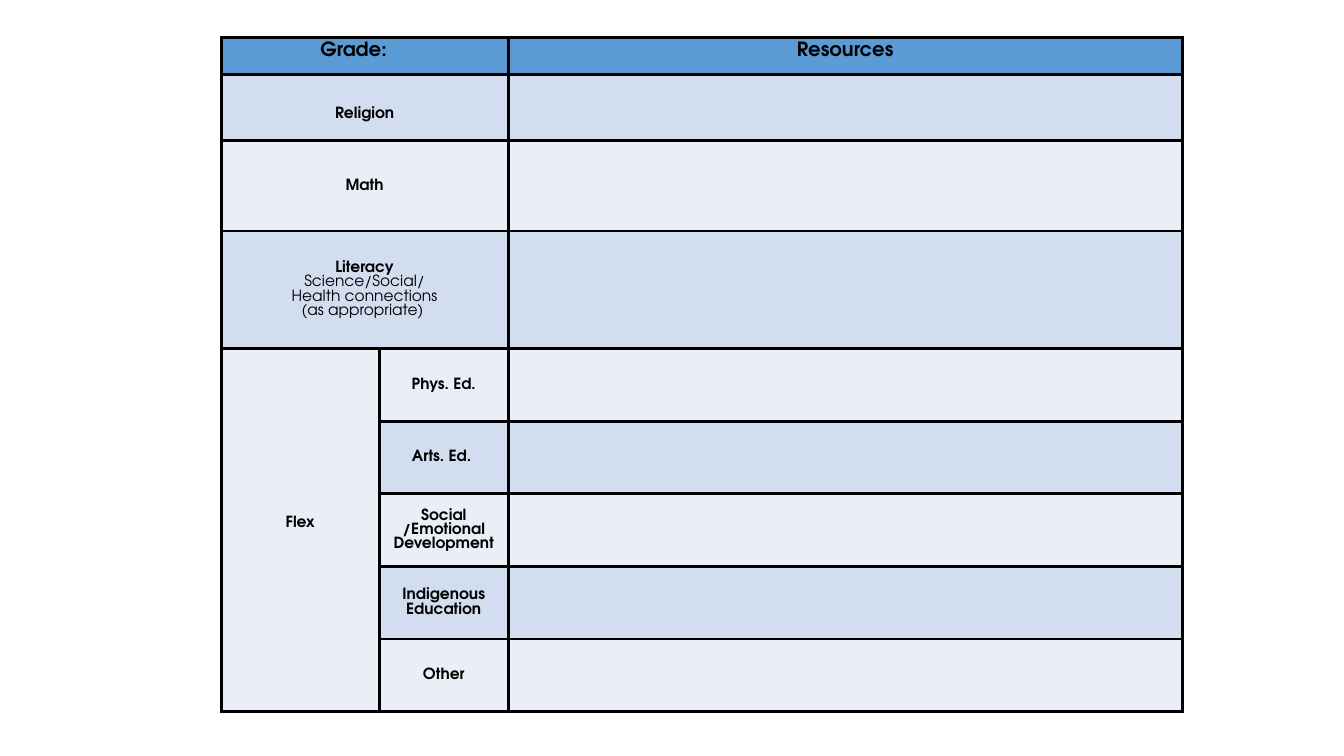
from lxml import etree
from pptx import Presentation
from pptx import util as u
from pptx.dml.color import RGBColor
from pptx.enum import text
from pptx.oxml.ns import qn

HEADER, DARK, LIGHT, BLACK = "5B9BD5", "D2DEEF", "EAEFF7", "000000"
MIDDLE, TOP = text.MSO_ANCHOR.MIDDLE, text.MSO_ANCHOR.TOP


def write(cell, lines, size=11, anchor=MIDDLE, bold_lines=9, top=3.6, right=7.2, bottom=3.6):
    cell.vertical_anchor = anchor
    cell.margin_top, cell.margin_right, cell.margin_bottom = u.Pt(top), u.Pt(right), u.Pt(bottom)
    for i, line in enumerate(lines.split("\n")):
        frame = cell.text_frame
        paragraph = frame.paragraphs[0] if i == 0 else frame.add_paragraph()
        paragraph.alignment = text.PP_ALIGN.CENTER
        run = paragraph.add_run()
        run.text = line
        run.font.name = "TeX Gyre Adventor"
        run.font.size = u.Pt(size)
        run.font.bold = i < bold_lines
        run.font.color.rgb = RGBColor.from_string(BLACK)


def paint(cell, color, width=2.25):
    properties = cell._tc.get_or_add_tcPr()
    for side in ("a:lnL", "a:lnR", "a:lnT", "a:lnB"):
        border = etree.SubElement(properties, qn(side), w=str(u.Pt(width)))
        solid = etree.SubElement(border, qn("a:solidFill"))
        etree.SubElement(solid, qn("a:srgbClr"), val=BLACK)
    cell.fill.solid()
    cell.fill.fore_color.rgb = RGBColor.from_string(color)


deck = Presentation()
deck.slide_width, deck.slide_height = u.Pt(960), u.Pt(540)
slide = deck.slides.add_slide(deck.slide_layouts[6])

# Timetable grid
columns = [113, 92, 481.5]
rows = [26.5, 47.2, 64.6, 84] + [51.9] * 5
timetable = slide.shapes.add_table(
    len(rows), len(columns), u.Pt(158), u.Pt(26.7), u.Pt(sum(columns)), u.Pt(sum(rows))
).table
for column, width in zip(timetable.columns, columns):
    column.width = u.Pt(width)
for r, height in enumerate(rows):
    timetable.rows[r].height = u.Pt(height)
    color = HEADER if r == 0 else DARK if r % 2 else LIGHT
    for c in range(len(columns)):
        paint(timetable.cell(r, c), color)

# Subject names span two columns, Flex spans its five areas
for r in range(4):
    timetable.cell(r, 0).merge(timetable.cell(r, 1))
timetable.cell(4, 0).merge(timetable.cell(8, 0))

# Header
write(timetable.cell(0, 0), "Grade:", size=14, anchor=TOP, right=23)
write(timetable.cell(0, 2), "Resources", size=14, anchor=TOP)

# Subjects
write(timetable.cell(1, 0), "Religion", top=13.9)
write(timetable.cell(2, 0), "Math")
write(
    timetable.cell(3, 0),
    "Literacy\nScience/Social/\nHealth connections\n(as appropriate) ",
    bold_lines=1,
)
write(timetable.cell(4, 0), "Flex", bottom=13.6)

# Flex areas
areas = ["Phys. Ed.", "Arts. Ed. ", "Social\n/Emotional\nDevelopment", "Indigenous Education", "Other"]
for r, area in enumerate(areas, start=4):
    write(timetable.cell(r, 1), area)

deck.save("out.pptx")
